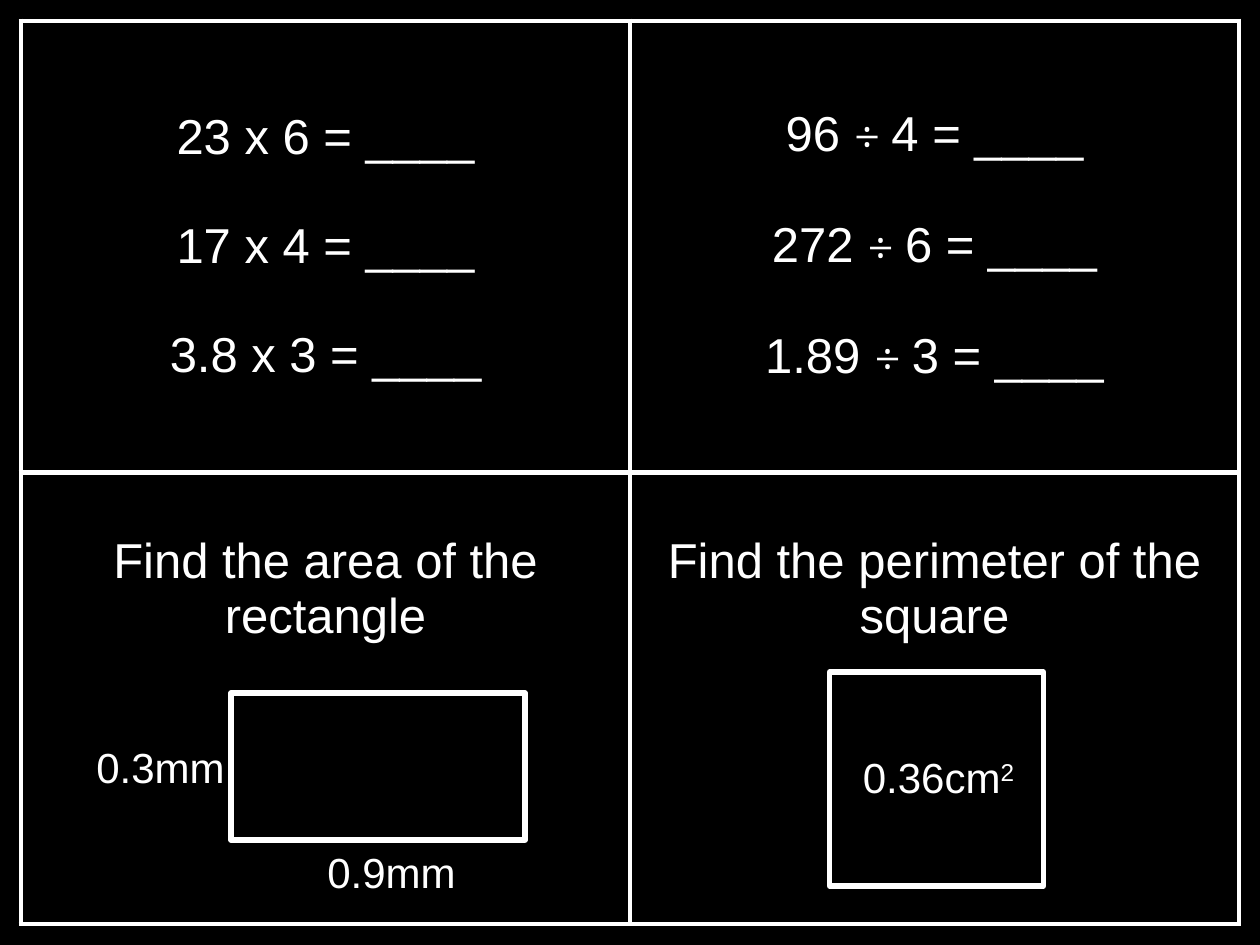
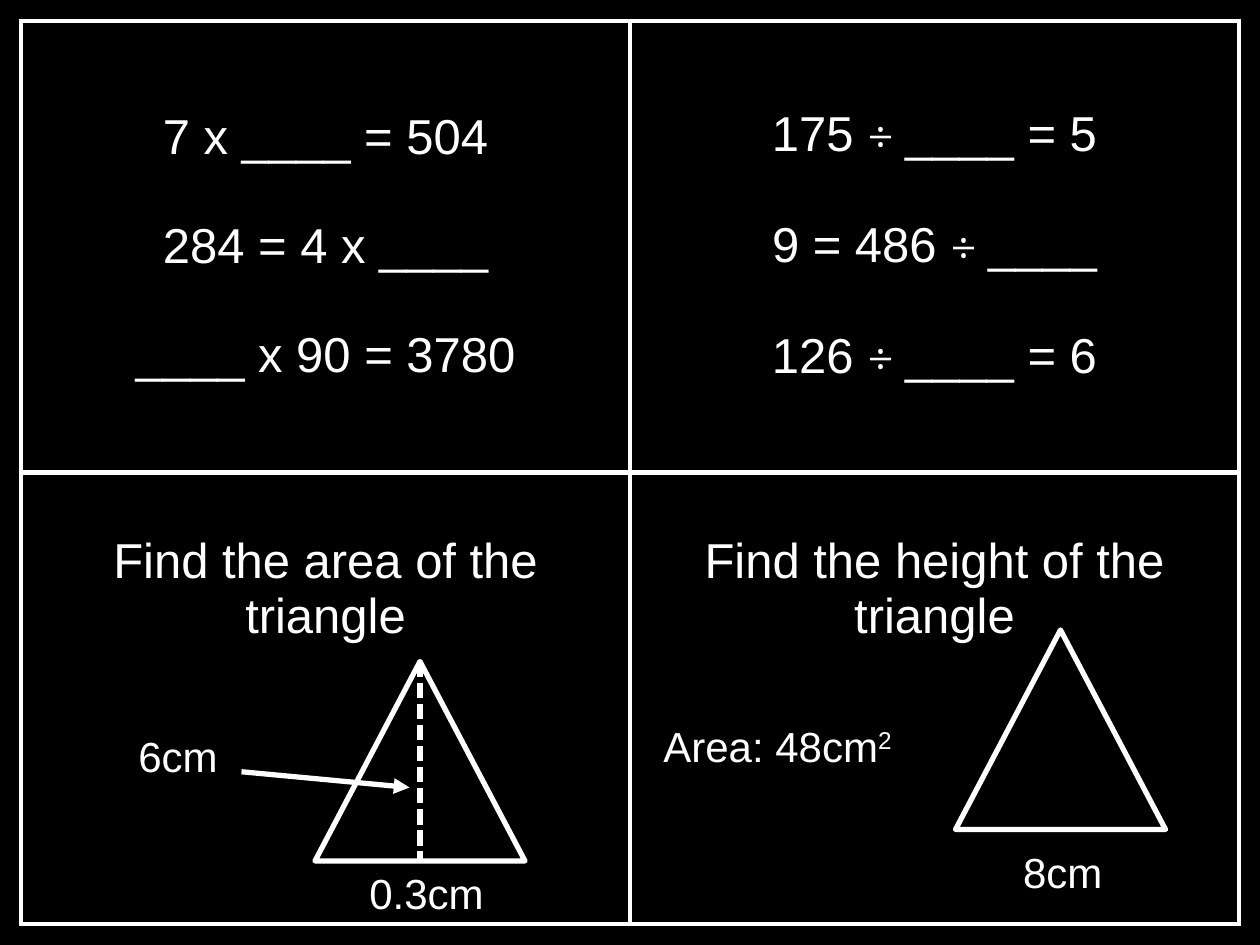
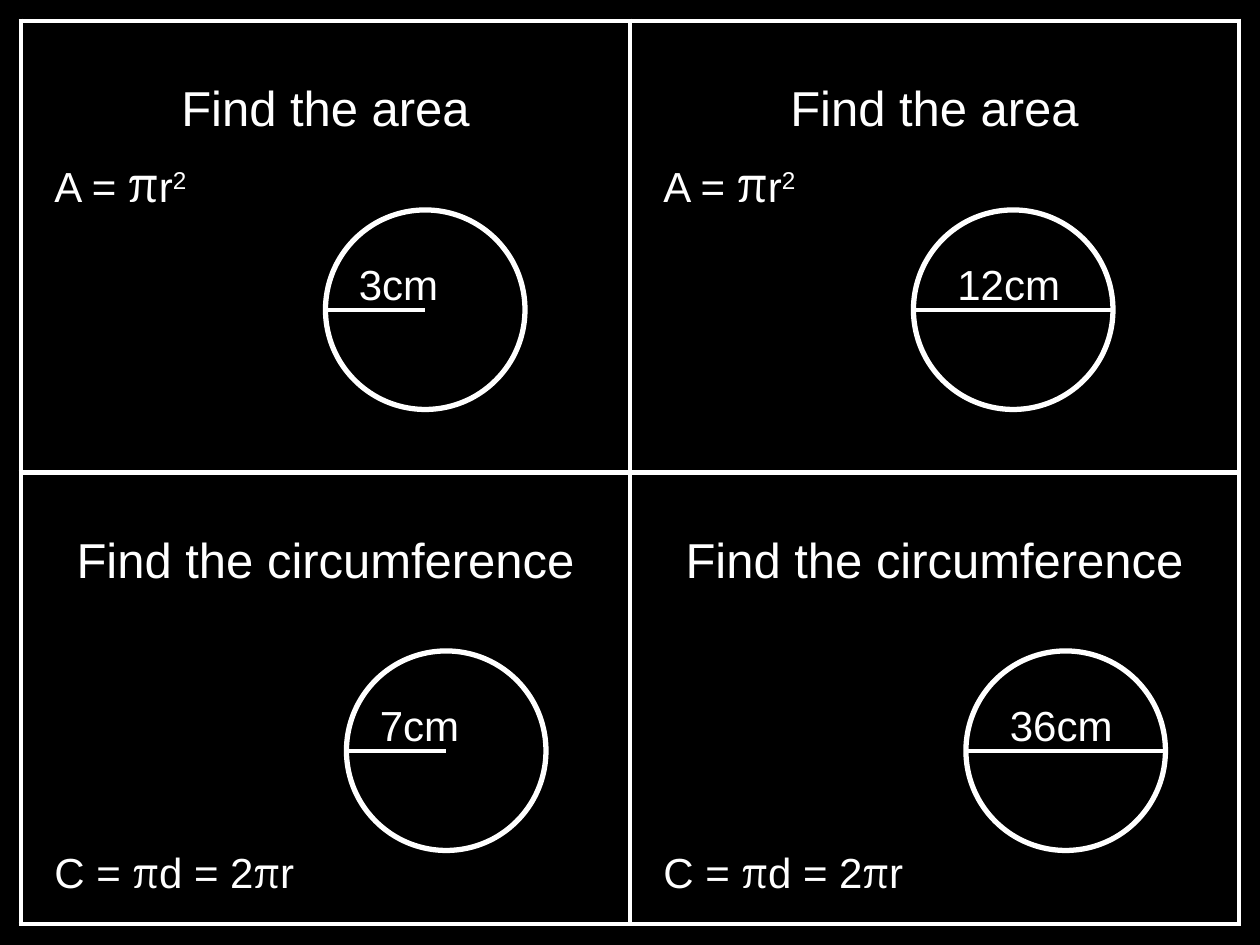
from dataclasses import dataclass

from lxml import etree
from pptx import Presentation
from pptx.dml.color import RGBColor
from pptx.enum.dml import MSO_LINE
from pptx.enum.shapes import MSO_CONNECTOR, MSO_SHAPE
from pptx.enum.text import MSO_ANCHOR, MSO_AUTO_SIZE, PP_ALIGN
from pptx.oxml.ns import qn
from pptx.util import Emu, Pt

RECT, TRI, OVAL = MSO_SHAPE.RECTANGLE, MSO_SHAPE.ISOSCELES_TRIANGLE, MSO_SHAPE.OVAL
STRAIGHT, DASH = MSO_CONNECTOR.STRAIGHT, MSO_LINE.SQUARE_DOT
TOP, MIDDLE = MSO_ANCHOR.TOP, MSO_ANCHOR.MIDDLE
CENTER, LEFT = PP_ALIGN.CENTER, PP_ALIGN.LEFT
GROW = MSO_AUTO_SIZE.SHAPE_TO_FIT_TEXT

WHITE = RGBColor(0xFF, 0xFF, 0xFF)
BLACK = RGBColor(0, 0, 0)
SANS, MATH = "Arial", "Cambria"
BIG, SMALL = 28, 24  # text sizes in points
THICK, THIN = 3, 2.25  # line widths in points
SUM_GAP = 31  # points between sums

# Board grid in px, 96 to the inch
EDGE, COL, ROW = 16, 464, 344
HEAD_TOP = 47
DIAM = 152


def px(n: int) -> Emu:
    return Emu(n * 9525)


@dataclass(frozen=True)
class Run:
    text: str
    font: str = SANS
    size: int = SMALL
    raised: bool = False


@dataclass(frozen=True)
class Label:
    x: int
    y: int
    w: int
    runs: tuple[Run, ...]
    h: int = 48


@dataclass(frozen=True)
class Figure:
    kind: MSO_SHAPE
    x: int
    y: int
    w: int
    h: int


@dataclass(frozen=True)
class Line:
    x1: int
    y1: int
    x2: int
    y2: int
    width: float = THICK
    dashed: bool = False
    arrow: bool = False


@dataclass(frozen=True)
class Circle:
    x: int
    y: int
    size: str
    whole: bool  # the line spans the diameter, not the radius


Mark = Label | Figure | Line | Circle


@dataclass(frozen=True)
class Page:
    cells: tuple[tuple[str, ...], ...]  # one line is a heading, more are sums
    marks: tuple[Mark, ...]


# Text
def add_runs(para, runs, align=LEFT) -> None:
    para.alignment = align
    for item in runs:
        run = para.add_run()
        run.text = item.text
        run.font.name = item.font
        run.font.size = Pt(item.size)
        run.font.color.rgb = WHITE
        if item.raised:
            run.font._element.set("baseline", "30000")


def sum_runs(text: str) -> list[Run]:
    """Set the division sign in the maths font."""
    left, sign, right = text.partition("÷ ")
    runs = (Run(left, size=BIG), Run(sign, MATH, BIG), Run(right, size=BIG))
    return [run for run in runs if run.text]


def add_label(slide, label: Label) -> None:
    box = slide.shapes.add_textbox(px(label.x), px(label.y), px(label.w), px(label.h))
    frame = box.text_frame
    frame.word_wrap = True
    frame.auto_size = GROW
    add_runs(frame.paragraphs[0], label.runs)


# Board
def add_borders(cell) -> None:
    props = cell._tc.get_or_add_tcPr()
    for side in ("a:lnL", "a:lnR", "a:lnT", "a:lnB"):
        line = etree.SubElement(props, qn(side), w=str(Pt(THICK)))
        fill = etree.SubElement(line, qn("a:solidFill"))
        etree.SubElement(fill, qn("a:srgbClr"), val=str(WHITE))


def fill_cell(cell, lines: tuple[str, ...]) -> None:
    add_borders(cell)
    cell.fill.background()
    if len(lines) == 1:
        cell.vertical_anchor = TOP
        cell.margin_top = px(HEAD_TOP)
    else:
        cell.vertical_anchor = MIDDLE
    frame = cell.text_frame
    for i, text in enumerate(lines):
        para = frame.add_paragraph() if i else frame.paragraphs[0]
        if i:
            para.space_before = Pt(SUM_GAP)
        add_runs(para, sum_runs(text), CENTER)


def add_board(slide, cells: tuple[tuple[str, ...], ...]) -> None:
    frame = slide.shapes.add_table(2, 2, px(EDGE), px(EDGE), px(2 * COL), px(2 * ROW))
    table = frame.table
    table.first_row = table.horz_banding = False
    for i in range(2):
        table.columns[i].width = px(COL)
        table.rows[i].height = px(ROW)
    for i, lines in enumerate(cells):
        fill_cell(table.cell(i // 2, i % 2), lines)


# Drawings
def add_figure(slide, fig: Figure) -> None:
    shape = slide.shapes.add_shape(fig.kind, px(fig.x), px(fig.y), px(fig.w), px(fig.h))
    shape.shadow.inherit = False
    shape.fill.background()
    shape.line.color.rgb = WHITE
    shape.line.width = Pt(THICK)


def add_line(slide, item: Line) -> None:
    ends = (px(n) for n in (item.x1, item.y1, item.x2, item.y2))
    link = slide.shapes.add_connector(STRAIGHT, *ends)
    link.line.color.rgb = WHITE
    link.line.width = Pt(item.width)
    if item.dashed:
        link.line.dash_style = DASH
    if item.arrow:
        etree.SubElement(link.line._get_or_add_ln(), qn("a:tailEnd"), type="triangle")
    etree.SubElement(link._element.spPr, qn("a:effectLst"))


def add_circle(slide, ring: Circle) -> None:
    half = DIAM // 2
    mid = ring.y + half
    end = ring.x + (DIAM if ring.whole else half)
    inset = 24 if ring.whole else 16
    add_figure(slide, Figure(OVAL, ring.x, ring.y, DIAM, DIAM))
    add_line(slide, Line(ring.x, mid, end, mid, THIN))
    add_label(slide, Label(ring.x + inset, ring.y + 32, 128, (Run(ring.size),)))


DRAW = {Label: add_label, Figure: add_figure, Line: add_line, Circle: add_circle}

# Content
SQUARED = Run("2", raised=True)
PI = Run("π", MATH)
AREA = (Run("A = "), Run("π", MATH, BIG), Run("r"), SQUARED)
ROUND = (Run("C = "), PI, Run("d = 2"), PI, Run("r"))
NOTES = (32, 32 + COL)  # left of the formula in each column

PAGES = (
    Page(
        (
            ("23 x 6 = ____", "17 x 4 = ____", "3.8 x 3 = ____"),
            ("96 ÷ 4 = ____", "272 ÷ 6 = ____", "1.89 ÷ 3 = ____"),
            ("Find the area of the rectangle",),
            ("Find the perimeter of the square",),
        ),
        (
            Figure(RECT, 176, 528, 224, 112),
            Label(64, 560, 120, (Run("0.3mm"),)),
            Label(240, 640, 120, (Run("0.9mm"),)),
            Figure(RECT, 632, 512, 163, 163),
            Label(648, 568, 144, (Run("0.36cm"), SQUARED)),
        ),
    ),
    Page(
        (
            ("7 x ____ = 504", "284 = 4 x ____", "____ x 90 = 3780"),
            ("175 ÷ ____ = 5", "9 = 486 ÷ ____", "126 ÷ ____ = 6"),
            ("Find the area of the triangle",),
            ("Find the height of the triangle",),
        ),
        (
            Figure(TRI, 240, 504, 160, 152),
            Label(272, 656, 120, (Run("0.3cm"),)),
            Line(320, 504, 320, 656, dashed=True),
            Figure(TRI, 728, 480, 160, 152),
            Label(496, 544, 208, (Run("Area: 48cm"), SQUARED)),
            Label(770, 640, 102, (Run("8cm"),)),
            Line(184, 588, 312, 600, arrow=True),
            Label(96, 552, 120, (Run("6cm"),)),
        ),
    ),
    Page(
        (("Find the area",),) * 2 + (("Find the circumference",),) * 2,
        (
            *(Label(x, 112, 128, AREA, 55) for x in NOTES),
            *(Label(x, 640, 224, ROUND) for x in NOTES),
            Circle(248, 160, "3cm", False),
            Circle(696, 160, "12cm", True),
            Circle(264, 496, "7cm", False),
            Circle(736, 496, "36cm", True),
        ),
    ),
)


def main() -> None:
    prs = Presentation()
    prs.slide_width, prs.slide_height = px(960), px(720)
    back = prs.slide_master.background.fill
    back.solid()
    back.fore_color.rgb = BLACK
    blank = prs.slide_layouts[6]
    for page in PAGES:
        slide = prs.slides.add_slide(blank)
        add_board(slide, page.cells)
        for mark in page.marks:
            DRAW[type(mark)](slide, mark)
    prs.save("out.pptx")


if __name__ == "__main__":
    main()
